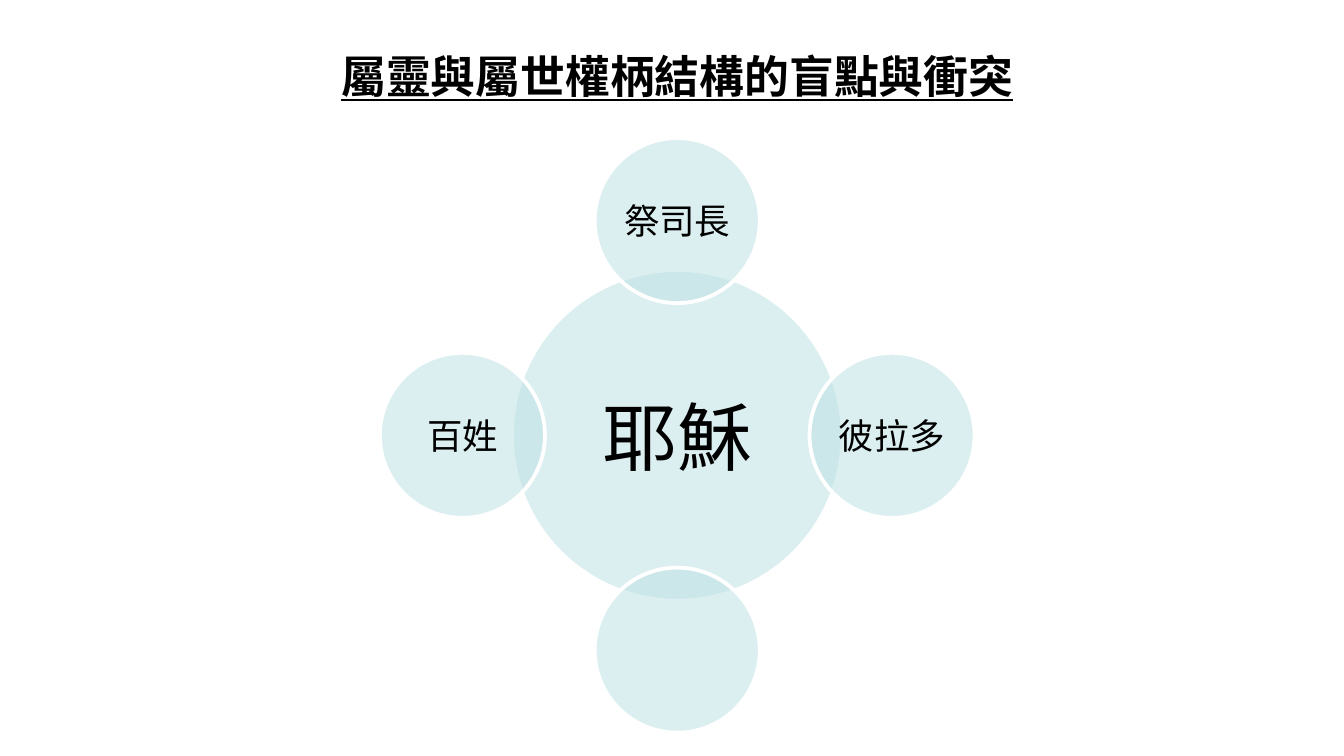
from dataclasses import dataclass

import pptx
import pptx.dml.color
import pptx.enum.shapes
import pptx.enum.text
import pptx.oxml.ns
import pptx.slide
import pptx.text.text
import pptx.util
from lxml import etree
from pptx.util import Cm

FONT = "Noto Sans CJK TC"
COLORS = {"text": "000000", "disc": "BBE0E3", "edge": "FFFFFF"}
ALPHA = 50  # percent
MID_X, MID_Y = 12.8, 8.23  # centre of the diagram, in cm
REACH = 4.06  # from the centre to each outer disc


@dataclass
class Disc:
    text: str
    dx: int
    dy: int
    size: float = 3.12
    points: int = 19
    inset: float = 0.08


DISCS = [
    Disc("耶穌", 0, 0, 6.25, 40, 0.15),
    Disc("祭司長", 0, -1),
    Disc("彼拉多", 1, 0),
    Disc("", 0, 1),
    Disc("百姓", -1, 0),
]


def color(name: str) -> pptx.dml.color.RGBColor:
    return pptx.dml.color.RGBColor.from_string(COLORS[name])


def add_run(para: pptx.text.text._Paragraph, text: str, points: int,
            strong: bool = False) -> None:
    run = para.add_run()
    run.text = text
    font = run.font
    font.size = pptx.util.Pt(points)
    font.name = FONT
    font.color.rgb = color("text")
    if strong:
        font.bold = font.underline = True
    # East Asian typeface
    props = run._r.get_or_add_rPr()
    etree.SubElement(props, pptx.oxml.ns.qn("a:ea"), typeface=FONT)


def add_title(slide: pptx.slide.Slide, text: str) -> None:
    box = slide.shapes.add_textbox(Cm(6.2), Cm(0.79), Cm(13.21), Cm(1.27))
    frame = box.text_frame
    frame.word_wrap = False
    frame.auto_size = pptx.enum.text.MSO_AUTO_SIZE.SHAPE_TO_FIT_TEXT
    add_run(frame.paragraphs[0], text, 24, strong=True)


def add_disc(slide: pptx.slide.Slide, disc: Disc) -> None:
    left = MID_X + disc.dx * REACH - disc.size / 2
    top = MID_Y + disc.dy * REACH - disc.size / 2
    shape = slide.shapes.add_shape(
        pptx.enum.shapes.MSO_SHAPE.OVAL,
        Cm(left), Cm(top), Cm(disc.size), Cm(disc.size))
    shape.shadow.inherit = False
    shape.line.color.rgb = color("edge")
    shape.line.width = pptx.util.Pt(2)

    # See-through fill
    shape.fill.solid()
    shape.fill.fore_color.rgb = color("disc")
    tint = shape._element.spPr.find(
        "/".join(map(pptx.oxml.ns.qn, ("a:solidFill", "a:srgbClr"))))
    etree.SubElement(tint, pptx.oxml.ns.qn("a:alpha"), val=str(ALPHA * 1000))

    # Label
    if disc.text:
        frame = shape.text_frame
        frame.word_wrap = True
        frame.vertical_anchor = pptx.enum.text.MSO_ANCHOR.MIDDLE
        frame.margin_left = frame.margin_right = Cm(disc.inset)
        frame.margin_top = frame.margin_bottom = Cm(disc.inset)
        para = frame.paragraphs[0]
        para.alignment = pptx.enum.text.PP_ALIGN.CENTER
        add_run(para, disc.text, disc.points)


def main() -> None:
    deck = pptx.Presentation()
    deck.slide_width, deck.slide_height = Cm(25.4), Cm(14.29)
    slide = deck.slides.add_slide(deck.slide_layouts[6])
    add_title(slide, "屬靈與屬世權柄結構的盲點與衝突")
    for disc in DISCS:
        add_disc(slide, disc)
    deck.save("out.pptx")


if __name__ == "__main__":
    main()
